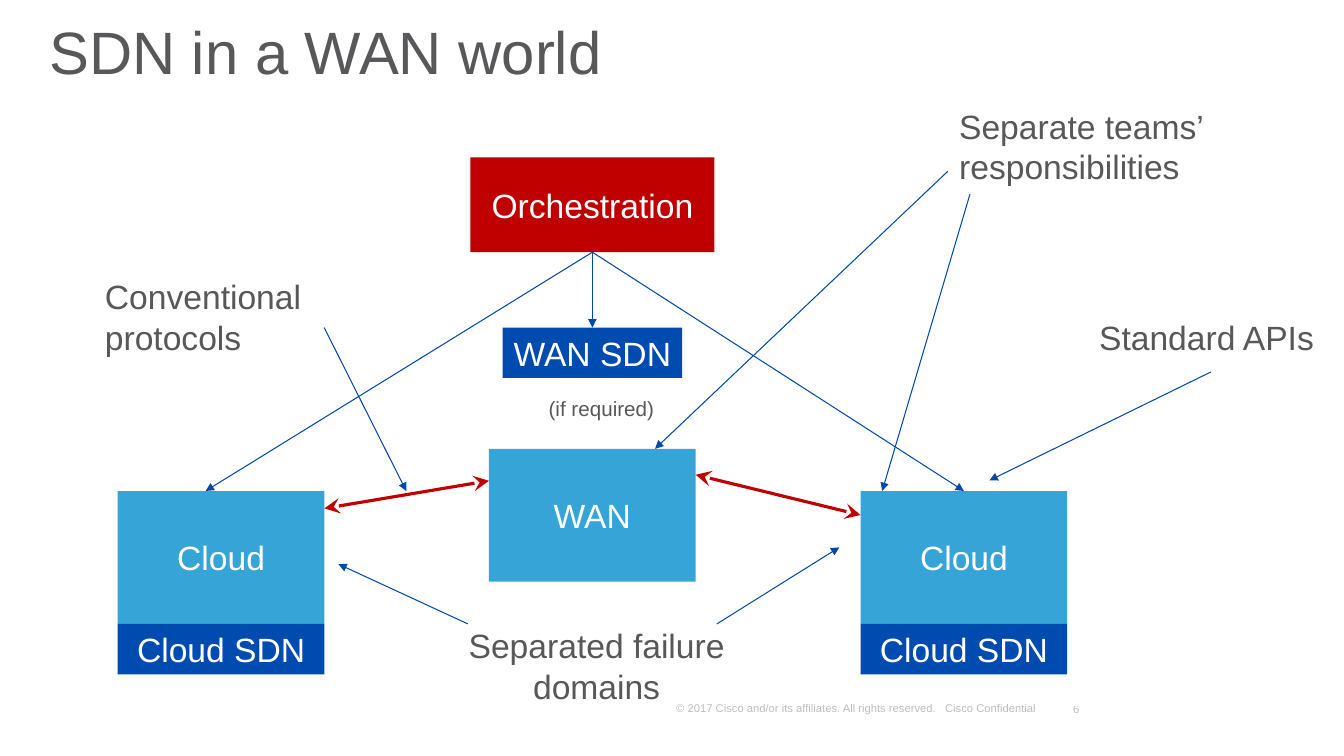
from dataclasses import dataclass

from lxml import etree
from pptx import Presentation
from pptx.dml.color import RGBColor
from pptx.enum.shapes import MSO_CONNECTOR, MSO_SHAPE
from pptx.enum.text import MSO_ANCHOR, MSO_AUTO_SIZE, PP_ALIGN
from pptx.oxml.ns import qn
from pptx.shapes.autoshape import Shape
from pptx.shapes.connector import Connector
from pptx.slide import Slide
from pptx.util import Inches, Pt

RECT = MSO_SHAPE.RECTANGLE
LINE = MSO_CONNECTOR.STRAIGHT
TOP, MIDDLE, BOTTOM = MSO_ANCHOR.TOP, MSO_ANCHOR.MIDDLE, MSO_ANCHOR.BOTTOM
LEFT, CENTER, RIGHT = PP_ALIGN.LEFT, PP_ALIGN.CENTER, PP_ALIGN.RIGHT
GROW = MSO_AUTO_SIZE.SHAPE_TO_FIT_TEXT

WHITE = RGBColor(0xFF, 0xFF, 0xFF)
BLACK = RGBColor(0x00, 0x00, 0x00)
GRAY = RGBColor(0x58, 0x58, 0x5B)
SKY = RGBColor(0x36, 0xA4, 0xD7)
BLUE = RGBColor(0x00, 0x4B, 0xAF)
NAVY = RGBColor(0x00, 0x49, 0xAB)
RED = RGBColor(0xC0, 0x00, 0x00)

# All positions and sizes are percent shares of the slide's width and height.
WIDTH, HEIGHT = Inches(13.33), Inches(7.5)
SIDE_TOP, SITE_W, SITE_H = 64.95, 15.38, 17.58
SDN_TOP, SDN_H = 82.53, 6.67
WEST, MID, EAST = 8.76, 36.38, 64.03
TWO_ROWS = 12.13


@dataclass(frozen=True)
class Box:
    key: str
    text: str
    left: float
    top: float
    width: float
    height: float
    fill: RGBColor
    wrap: bool = True


@dataclass(frozen=True)
class Note:
    text: str
    left: float
    top: float
    width: float
    height: float
    size: float = 24
    align: PP_ALIGN = LEFT
    wrap: bool = True


@dataclass(frozen=True)
class Arrow:
    start: tuple[float, float]
    end: tuple[float, float]


BOXES = [
    Box("west", "Cloud", WEST, SIDE_TOP, SITE_W, SITE_H, SKY),
    Box("east", "Cloud", EAST, SIDE_TOP, SITE_W, SITE_H, SKY),
    Box("wan", "WAN", MID, 59.37, SITE_W, SITE_H, SKY),
    Box("top", "Orchestration", 35, 20.83, 18.15, 12.53, RED),
    Box("wan sdn", "WAN SDN", 37.4, 43.33, 13.35, SDN_H, BLUE, wrap=False),
    Box("west sdn", "Cloud SDN", WEST, SDN_TOP, SITE_W, SDN_H, BLUE),
    Box("east sdn", "Cloud SDN", EAST, SDN_TOP, SITE_W, SDN_H, BLUE),
]
NOTES = [
    Note("Standard APIs", 81.04, 41.2, 17.63, SDN_H, wrap=False),
    Note("Separated failure domains", 33.78, 82.05, 21.23, TWO_ROWS,
         align=CENTER),
    Note("(if required)", 40.08, 51.73, 9.38, 4.67, size=14.7, wrap=False),
    Note("Conventional protocols", 7.07, 35.87, 17.03, TWO_ROWS),
    Note("Separate teams’ responsibilities", 70.63, 13.33, 22.73, TWO_ROWS),
]
# Box that each arrow from the top box points at, and where it ends.
MANAGED = {
    "west": Arrow((44.08, 33.36), (15.3, SIDE_TOP)),
    "wan sdn": Arrow((44.08, 33.36), (44.08, 43.33)),
    "east": Arrow((44.08, 33.36), (71.72, SIDE_TOP)),
}
OFF_CENTER = "west"
POINTERS = [
    Arrow((90.1, 49.2), (73.62, 63.55)),
    Arrow((34.81, SDN_TOP), (25.18, 74.62)),
    Arrow((53.34, SDN_TOP), (62.45, 72.4)),
    Arrow((24.12, 43.33), (30.23, SIDE_TOP)),
    Arrow((70.52, 22.67), (48.74, 59.37)),
    Arrow((72.17, 25.68), (65.64, SIDE_TOP)),
]
LINKS = [
    Arrow((WEST + SITE_W, 67.25), (MID, 63.6)),
    Arrow((EAST, 68.13), (MID + SITE_W, 62.8)),
]


def across(share: float) -> int:
    return round(WIDTH * share / 100)


def down(share: float) -> int:
    return round(HEIGHT * share / 100)


def write(shape: Shape, text: str, *, size: float = 24, color: RGBColor = GRAY,
          align: PP_ALIGN = LEFT, anchor: MSO_ANCHOR = TOP,
          wrap: bool = True, spacing: float = 1.0) -> None:
    frame = shape.text_frame
    frame.word_wrap = wrap
    frame.vertical_anchor = anchor
    para = frame.paragraphs[0]
    para.text = text
    para.alignment = align
    para.line_spacing = spacing
    font = para.runs[0].font
    font.name = "Arial"
    font.size = Pt(size)
    font.color.rgb = color


def add_text(slide: Slide, left: float, top: float, width: float,
             height: float) -> Shape:
    return slide.shapes.add_textbox(across(left), down(top),
                                    across(width), down(height))


def add_box(slide: Slide, box: Box) -> Shape:
    shape = slide.shapes.add_shape(RECT, across(box.left), down(box.top),
                                   across(box.width), down(box.height))
    shape.shadow.inherit = False
    shape.fill.solid()
    shape.fill.fore_color.rgb = box.fill
    shape.line.fill.background()
    write(shape, box.text, color=WHITE, align=CENTER, anchor=MIDDLE,
          wrap=box.wrap)
    return shape


def add_note(slide: Slide, note: Note) -> None:
    shape = add_text(slide, note.left, note.top, note.width, note.height)
    write(shape, note.text, size=note.size, align=note.align, wrap=note.wrap)
    shape.text_frame.auto_size = GROW


def add_arrow(slide: Slide, arrow: Arrow, *, color: RGBColor = NAVY,
              width: float = 0.75, head: str = "none",
              tail: str = "triangle", size: str = "med") -> Connector:
    (x1, y1), (x2, y2) = arrow.start, arrow.end
    line = slide.shapes.add_connector(LINE, across(x1), down(y1),
                                      across(x2), down(y2))
    line.line.color.rgb = color
    line.line.width = Pt(width)
    stroke = line.line._get_or_add_ln()
    for tag, kind in (("a:headEnd", head), ("a:tailEnd", tail)):
        etree.SubElement(stroke, qn(tag), type=kind, w=size, len=size)
    etree.SubElement(line._element.spPr, qn("a:effectLst"))
    return line


def add_footer(slide: Slide) -> None:
    page = add_text(slide, 78.58, 92.2, 2.4, 3.07)
    write(page, "6", size=8, color=BLACK, align=RIGHT, anchor=BOTTOM,
          wrap=False)
    notice = add_text(slide, 49.64, 92.05, 29.11, 3.07)
    write(notice, "© 2017 Cisco and/or its affiliates. All rights reserved."
          "   Cisco Confidential", size=8, color=BLACK, anchor=BOTTOM)
    for shape in (page, notice):
        frame = shape.text_frame
        frame.margin_left = frame.margin_right = Inches(0.09)
        frame.margin_top = frame.margin_bottom = Inches(0.04)
        for color in shape._element.iter(qn("a:srgbClr")):
            etree.SubElement(color, qn("a:alpha"), val="25000")


def main() -> None:
    deck = Presentation()
    deck.slide_width, deck.slide_height = WIDTH, HEIGHT
    slide = deck.slides.add_slide(deck.slide_layouts[6])
    add_footer(slide)
    title = add_text(slide, 2.93, 0.4, 91.3, 14.27)
    write(title, "SDN in a WAN world", size=42.7, anchor=MIDDLE, spacing=0.8)

    shapes = {box.key: add_box(slide, box) for box in BOXES}
    for note in NOTES:
        add_note(slide, note)
    for key, arrow in MANAGED.items():
        line = add_arrow(slide, arrow)
        line.begin_connect(shapes["top"], 2)
        if key != OFF_CENTER:
            line.end_connect(shapes[key], 0)
    for arrow in POINTERS:
        add_arrow(slide, arrow)
    for arrow in LINKS:
        add_arrow(slide, arrow, color=RED, width=2.25,
                  head="stealth", tail="stealth", size="lg")
    deck.save("out.pptx")


if __name__ == "__main__":
    main()
